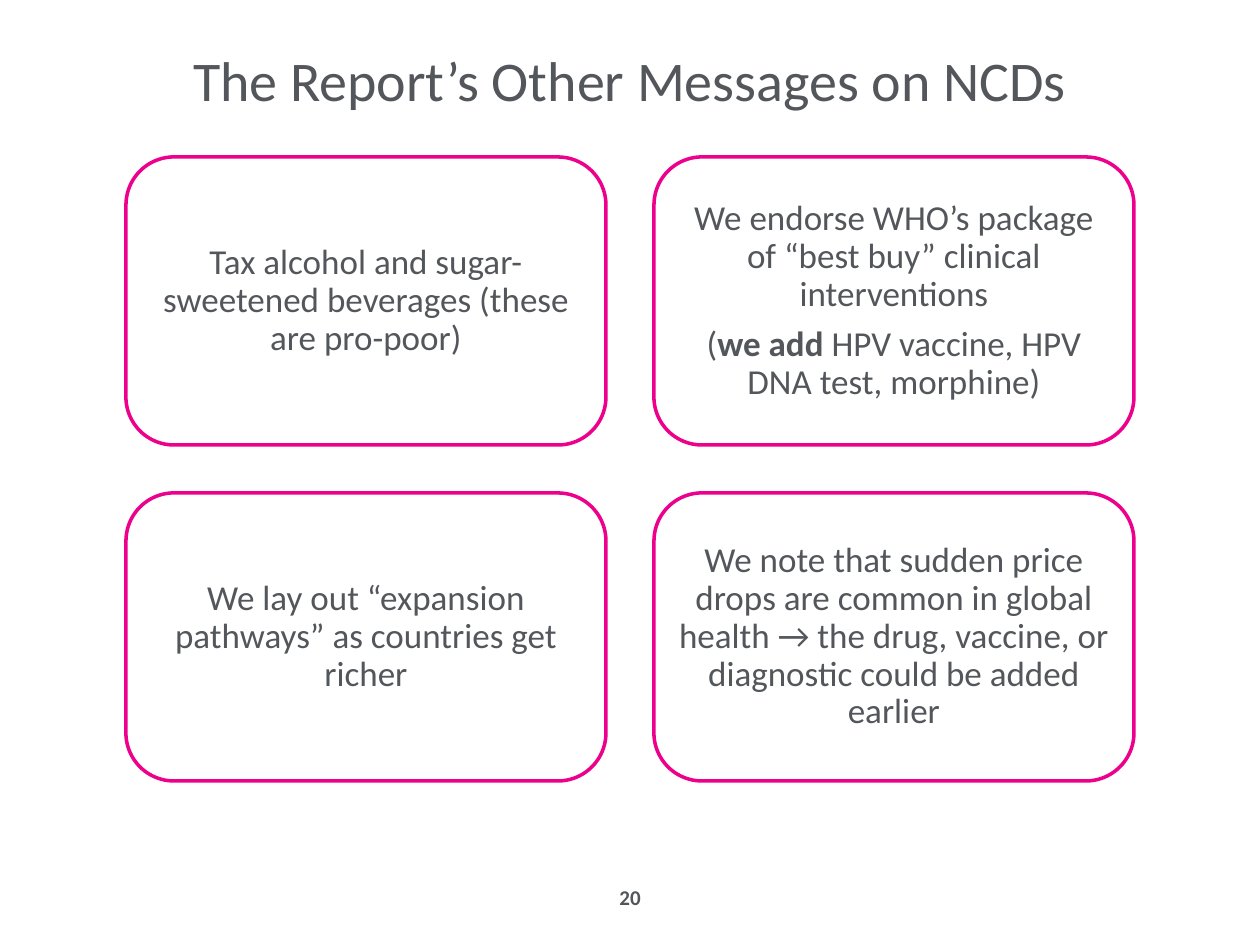
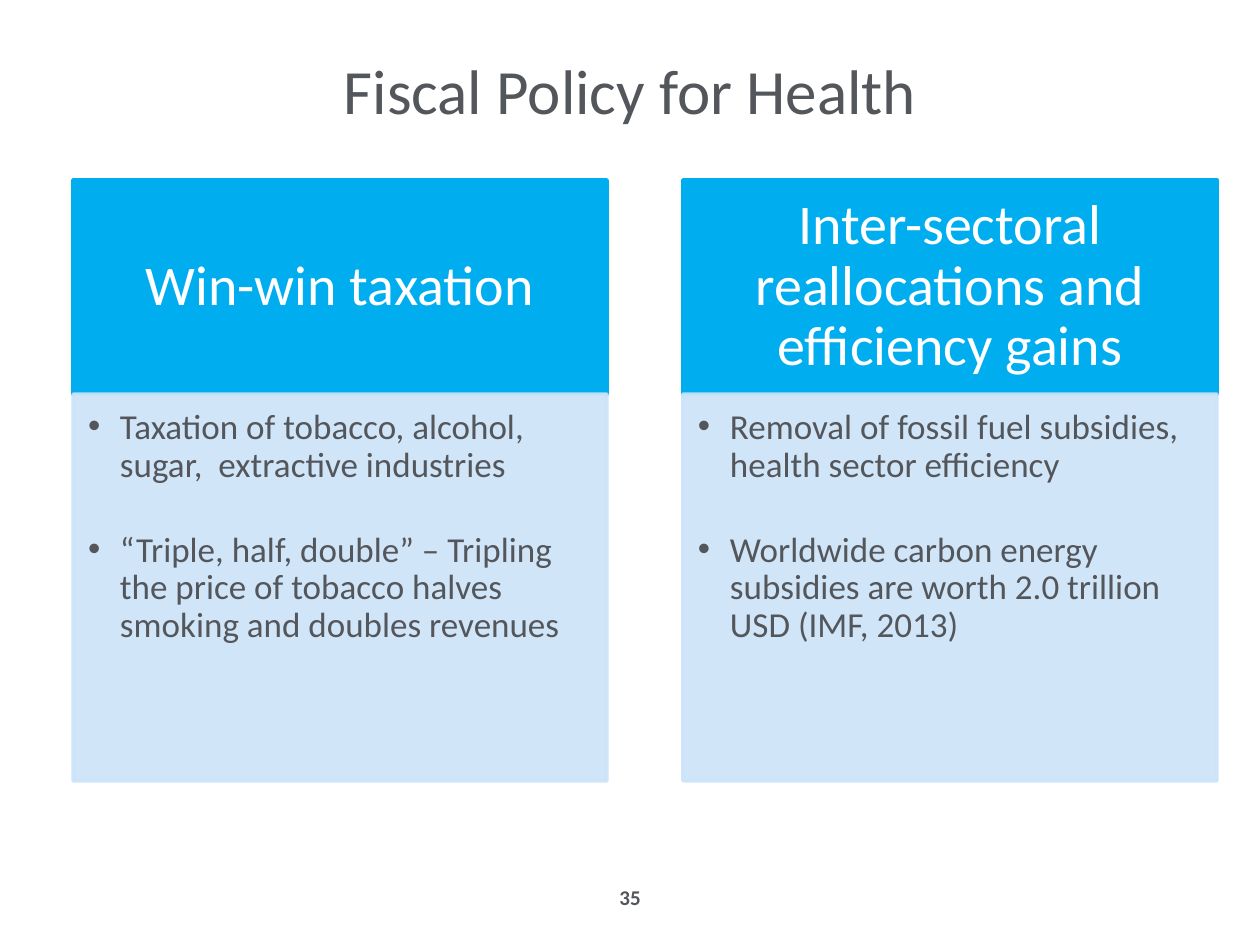
from dataclasses import dataclass

from lxml import etree
from pptx import Presentation
from pptx import util as u
from pptx.dml.color import RGBColor
from pptx.enum import shapes, text
from pptx.oxml import ns

PX = 914400 / 126
TITLE_ONLY = 5


@dataclass(frozen=True)
class Theme:
    font: str = "Calibri"
    ink: str = "53565A"
    white: str = "FFFFFF"
    pink: str = "EC008C"
    blue: str = "00AEEF"
    pale_blue: str = "CCE3F9"
    body_size: int = 20
    heading_size: int = 32
    number_size: int = 12
    line_width: int = 2
    line_spacing: float = 0.9


THEME = Theme()

CARDS = [
    ["Tax alcohol and sugar-sweetened beverages (these are pro-poor)"],
    ["We endorse WHO’s package of “best buy” clinical interventions",
     "(*we add* HPV vaccine, HPV DNA test, morphine)"],
    ["We lay out “expansion pathways” as countries get richer"],
    ["We note that sudden price drops are common in global health → "
     "the drug, vaccine, or diagnostic could be added earlier"],
]

POLICIES = [
    ("Win-win taxation",
     ["Taxation of tobacco, alcohol, sugar,  extractive industries",
      "“Triple, half, double” – Tripling the price of tobacco halves "
      "smoking and doubles revenues"]),
    ("Inter-sectoral reallocations and efficiency gains",
     ["Removal of fossil fuel subsidies, health sector efficiency",
      "Worldwide carbon energy subsidies are worth 2.0 trillion USD "
      "(IMF, 2013)"]),
]


def px(value):
    return u.Emu(round(value * PX))


def rect(*lengths):
    return [px(length) for length in lengths]


def style(span, size, color, bold=False):
    span.font.name = THEME.font
    span.font.size = u.Pt(size)
    span.font.color.rgb = RGBColor.from_string(color)
    span.font.bold = bold


def add_bullet(para, indent):
    properties = para._p.get_or_add_pPr()
    properties.set("marL", str(px(indent)))
    properties.set("indent", str(-px(indent)))
    etree.SubElement(properties, ns.qn("a:buFont"), typeface="Arial")
    etree.SubElement(properties, ns.qn("a:buChar"), char="•")


def set_alpha(shape, percent):
    for color in shape._element.spPr.iter(ns.qn("a:srgbClr")):
        etree.SubElement(color, ns.qn("a:alpha"), val=str(percent * 1000))


def write(box, paragraphs, size, color, insets, gap=0, bullet_indent=0):
    frame = box.text_frame
    frame.word_wrap = True
    frame.margin_left, frame.margin_top, frame.margin_right, frame.margin_bottom = rect(*insets)
    frame.vertical_anchor = text.MSO_ANCHOR.TOP if bullet_indent else text.MSO_ANCHOR.MIDDLE
    for index, words in enumerate(paragraphs):
        para = frame.add_paragraph() if index else frame.paragraphs[0]
        para.alignment = text.PP_ALIGN.LEFT if bullet_indent else text.PP_ALIGN.CENTER
        if bullet_indent:
            add_bullet(para, bullet_indent)
        para.line_spacing = THEME.line_spacing
        if index:
            para.space_before = u.Pt(gap)
        for part, phrase in enumerate(words.split("*")):
            span = para.add_run()
            span.text = phrase
            style(span, size, color, bold=part % 2 == 1)


def add_panel(page, kind, bounds, fill, line):
    panel = page.shapes.add_shape(kind, *rect(*bounds))
    panel.shadow.inherit = False
    panel.fill.solid()
    panel.fill.fore_color.rgb = RGBColor.from_string(fill)
    panel.line.color.rgb = RGBColor.from_string(line)
    panel.line.width = u.Pt(THEME.line_width)
    return panel


def add_card(page, left, top, paragraphs):
    card = add_panel(page, shapes.MSO_SHAPE.ROUNDED_RECTANGLE,
                     (left, top, 480, 288), THEME.white, THEME.pink)
    write(card, paragraphs, THEME.body_size, THEME.ink, (10, 10, 10, 10), gap=7)


def add_policy(page, left, heading, points):
    kind = shapes.MSO_SHAPE.RECTANGLE
    header = add_panel(page, kind, (left, 180, 534, 214), THEME.blue, THEME.blue)
    write(header, [heading], THEME.heading_size, THEME.white, (32, 18, 32, 18))
    body = add_panel(page, kind, (left, 394, 534, 387), THEME.pale_blue, THEME.pale_blue)
    set_alpha(body, 90)
    write(body, points, THEME.body_size, THEME.ink, (15, 15, 20, 21),
          gap=27, bullet_indent=32)


def add_page(deck, title, title_top, title_size, number):
    page = deck.slides.add_slide(deck.slide_layouts[TITLE_ONLY])
    heading = page.shapes.title
    heading.left, heading.top, heading.width, heading.height = rect(63, title_top, 1134, 158)
    heading.text_frame.text = title
    heading.text_frame.vertical_anchor = text.MSO_ANCHOR.MIDDLE
    para = heading.text_frame.paragraphs[0]
    para.alignment = text.PP_ALIGN.CENTER
    style(para.runs[0], title_size, THEME.ink)

    box = page.shapes.add_textbox(*rect(483, 872, 294, 50))
    box.text_frame.word_wrap = True
    box.text_frame.text = str(number)
    box.text_frame.vertical_anchor = text.MSO_ANCHOR.MIDDLE
    para = box.text_frame.paragraphs[0]
    para.alignment = text.PP_ALIGN.CENTER
    style(para.runs[0], THEME.number_size, THEME.ink, bold=True)
    return page


def main():
    deck = Presentation()
    deck.slide_width, deck.slide_height = rect(1260, 945)

    page = add_page(deck, "The Report’s Other Messages on NCDs", 0, 32, 20)
    for index, paragraphs in enumerate(CARDS):
        row, column = divmod(index, 2)
        add_card(page, 126 + column * 528, 157 + row * 336, paragraphs)

    page = add_page(deck, "Fiscal Policy for Health", 10, 36, 35)
    for column, (heading, points) in enumerate(POLICIES):
        add_policy(page, 73 + column * 610, heading, points)

    deck.save("out.pptx")


if __name__ == "__main__":
    main()
